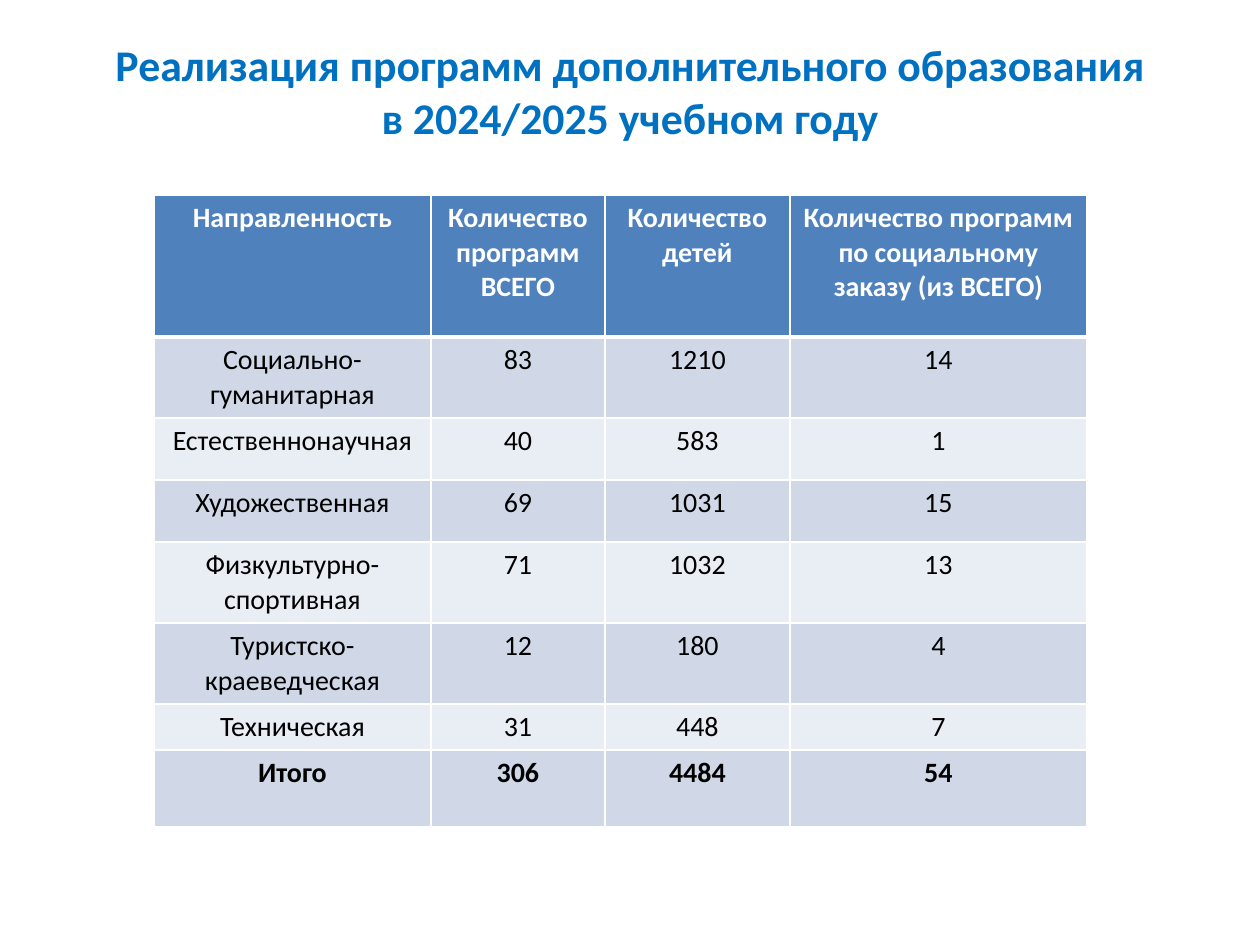
from dataclasses import dataclass

from lxml.etree import SubElement
from pptx import Presentation
from pptx.dml.color import RGBColor
from pptx.enum.text import MSO_ANCHOR, PP_ALIGN
from pptx.oxml.ns import qn
from pptx.util import Pt

EMU_PER_PX = 914400 / 126


def px(n):
    return round(n * EMU_PER_PX)


@dataclass(frozen=True)
class Theme:
    font: str = "Calibri"
    title: str = "0070C0"
    header: str = "4F81BD"
    bands: tuple = ("D0D8E8", "E9EDF4")
    text: str = "000000"
    white: str = "FFFFFF"
    title_pt: int = 25
    cell_pt: int = 16
    border_pt: int = 1
    header_border_pt: int = 3


class Deck:
    def __init__(self, width, height, theme):
        self.prs = Presentation()
        self.prs.slide_width, self.prs.slide_height = px(width), px(height)
        self.theme = theme
        self.s = None

    def add_slide(self):
        self.s = self.prs.slides.add_slide(self.prs.slide_layouts[6])

    def style_text(self, tf, size, color, bold):
        for p in tf.paragraphs:
            p.alignment = PP_ALIGN.CENTER
            for r in p.runs:
                r.font.name = self.theme.font
                r.font.size = Pt(size)
                r.font.bold = bold
                r.font.color.rgb = RGBColor.from_string(color)

    def title(self, text, x, y, w, h):
        tf = self.s.shapes.add_textbox(px(x), px(y), px(w), px(h)).text_frame
        tf.word_wrap = True
        tf.vertical_anchor = MSO_ANCHOR.TOP
        tf.margin_top = tf.margin_bottom = 0
        tf.text = text
        self.style_text(tf, self.theme.title_pt, self.theme.title, True)

    def borders(self, cell, row):
        """Draw white cell edges, thicker where the header meets the body."""
        thick = {0: "lnB", 1: "lnT"}.get(row)
        tc_pr = cell._tc.get_or_add_tcPr()
        for side in ("lnL", "lnR", "lnT", "lnB"):
            pt = self.theme.header_border_pt if side == thick else self.theme.border_pt
            ln = SubElement(tc_pr, qn(f"a:{side}"), w=str(Pt(pt)))
            fill = SubElement(ln, qn("a:solidFill"))
            SubElement(fill, qn("a:srgbClr"), val=self.theme.white)

    def table(self, rows, x, y, col_widths, row_heights):
        t = self.theme
        table = self.s.shapes.add_table(
            len(rows), len(col_widths), px(x), px(y),
            px(sum(col_widths)), px(sum(row_heights))).table
        for col, width in zip(table.columns, col_widths):
            col.width = px(width)
        for i, (values, height) in enumerate(zip(rows, row_heights)):
            table.rows[i].height = px(height)
            is_header, is_total = i == 0, i == len(rows) - 1
            for cell, value in zip(table.rows[i].cells, values):
                self.borders(cell, i)
                cell.fill.solid()
                fill = t.header if is_header else t.bands[(i - 1) % 2]
                cell.fill.fore_color.rgb = RGBColor.from_string(fill)
                cell.text_frame.text = str(value)
                self.style_text(cell.text_frame, t.cell_pt,
                                t.white if is_header else t.text,
                                is_header or is_total)


PROGRAMS = [
    ("Направленность", "Количество программ ВСЕГО", "Количество детей",
     "Количество программ\nпо социальному заказу (из ВСЕГО)"),
    ("Социально-гуманитарная", 83, 1210, 14),
    ("Естественнонаучная", 40, 583, 1),
    ("Художественная", 69, 1031, 15),
    ("Физкультурно-спортивная", 71, 1032, 13),
    ("Туристско-краеведческая", 12, 180, 4),
    ("Техническая", 31, 448, 7),
    ("Итого", 306, 4484, 54),
]


def main():
    deck = Deck(1260, 945, Theme())
    deck.add_slide()
    deck.title("Реализация программ дополнительного образования\v"
               "в 2024/2025 учебном году", 63, 38, 1134, 157)
    deck.table(PROGRAMS, 154, 195, (277, 174, 185, 297),
               (142, 81, 62, 62, 81, 81, 46, 77))
    deck.prs.save("out.pptx")


if __name__ == "__main__":
    main()
